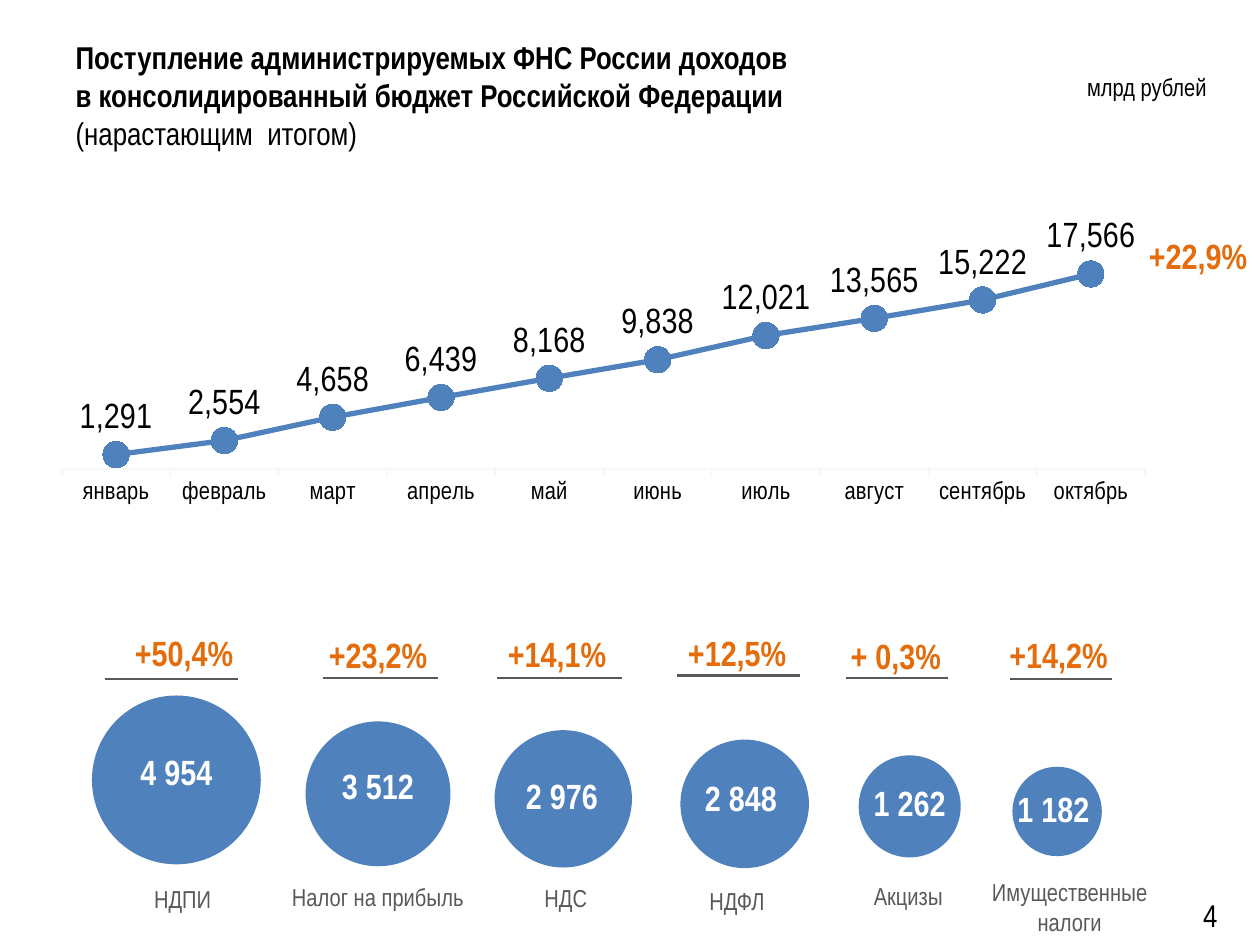
from collections import namedtuple
from dataclasses import dataclass

from lxml.etree import SubElement
from pptx import Presentation
from pptx.chart.data import CategoryChartData as ChartData
from pptx.dml.color import RGBColor as RGB
from pptx.enum.chart import (XL_CHART_TYPE as Kind, XL_LABEL_POSITION as Place,
                             XL_MARKER_STYLE as Mark, XL_TICK_MARK as Tick)
from pptx.enum.shapes import MSO_CONNECTOR as Link, MSO_SHAPE as Shape
from pptx.enum.text import MSO_ANCHOR as Anchor, MSO_AUTO_SIZE as Fit, PP_ALIGN as Align
from pptx.oxml import parse_xml
from pptx.oxml.ns import nsdecls, qn
from pptx.util import Inches, Pt


@dataclass(frozen=True)
class Theme:
    font: str = "Arial Narrow"
    blue: RGB = RGB(0x4F, 0x81, 0xBD)
    orange: RGB = RGB(0xE4, 0x6C, 0x0A)
    gray: RGB = RGB(0x59, 0x59, 0x59)
    pale: RGB = RGB(0xBF, 0xBF, 0xBF)
    black: RGB = RGB(0, 0, 0)
    white: RGB = RGB(0xFF, 0xFF, 0xFF)
    small: int = 14
    head: int = 18
    large: int = 20


theme = Theme()
Box = namedtuple("Box", "left top width height")
# Points are (x from the column's middle, y from its top)
Tax = namedtuple("Tax", "names value growth mid size disc_y num label gain rule rule_w")

MONTHS = ("январь", "февраль", "март", "апрель", "май", "июнь",
          "июль", "август", "сентябрь", "октябрь")
TOTALS = (1291, 2554, 4658, 6439, 8168, 9838, 12021, 13565, 15222, 17566)

TAXES = (
    Tax(["НДПИ"], "4 954", "+50,4%", 1.4, 1.34, 1.29,
        (0, 1.22), (0.05, 2.24), (0.06, 0.28), (-0.04, 0.49), 1.06),
    Tax(["Налог на прибыль"], "3 512", "+23,2%", 3, 1.15, 1.4,
        (0, 1.33), (0, 2.22), (0, 0.3), (0.02, 0.48), 0.92),
    Tax(["НДС"], "2 976", "+14,1%", 4.47, 1.09, 1.44,
        (-0.01, 1.41), (0.02, 2.23), (-0.05, 0.29), (-0.03, 0.48), 0.99),
    Tax(["НДФЛ"], "2 848", "+12,5%", 5.91, 1.02, 1.48,
        (-0.03, 1.43), (-0.06, 2.25), (-0.06, 0.28), (-0.05, 0.46), 0.98),
    Tax(["Акцизы"], "1 262", "+ 0,3%", 7.22, 0.81, 1.5,
        (0, 1.47), (-0.01, 2.21), (-0.11, 0.31), (-0.1, 0.48), 0.81),
    Tax(["Имущественные", "налоги"], "1 182", "+14,2%", 8.39, 0.71, 1.54,
        (-0.03, 1.52), (0.1, 2.3), (0.01, 0.3), (0.03, 0.49), 0.81),
)


def style(font, size, color, bold=False):
    font.name, font.size, font.bold = theme.font, Pt(size), bold
    font.color.rgb = color


def add_text(slide, box, lines, size, color, bold=False, align=Align.CENTER,
             anchor=Anchor.TOP):
    frame = slide.shapes.add_textbox(*map(Inches, box)).text_frame
    frame.word_wrap, frame.auto_size = False, Fit.NONE
    frame.vertical_anchor = anchor
    for i, line in enumerate(lines):
        para = frame.paragraphs[0] if i == 0 else frame.add_paragraph()
        para.alignment = align
        run = para.add_run()
        run.text = line
        style(run.font, size, color, bold)
    return frame


def draw_head(slide, box):
    title = slide.shapes.title
    title.left, title.top, title.width, title.height = map(Inches, box)
    frame = title.text_frame
    frame.word_wrap, frame.auto_size = True, Fit.NONE
    frame.vertical_anchor = Anchor.MIDDLE
    para = frame.paragraphs[0]
    para.alignment = Align.LEFT
    lines = (("Поступление администрируемых ФНС России доходов ", True),
             ("в консолидированный бюджет Российской Федерации", True),
             ("(нарастающим  итогом)", False))
    for i, (line, bold) in enumerate(lines):
        if i:
            para.add_line_break()
        run = para.add_run()
        run.text = line
        style(run.font, theme.head, theme.black, bold)
    # Unit of measure, at the right
    add_text(slide, Box(box.left + 8.03, box.top + 0.39, 1.22, 0.34),
             ["млрд рублей"], theme.small, theme.black, align=Align.LEFT)


def draw_chart(slide, box):
    data = ChartData(number_format="#,##0")
    data.categories = MONTHS
    data.add_series("Доходы", TOTALS)
    chart = slide.shapes.add_chart(Kind.LINE_MARKERS_STACKED, *map(Inches, box), data).chart
    style(chart.font, theme.head, theme.black)
    chart.has_legend = chart.has_title = False

    # Axes
    values, months = chart.value_axis, chart.category_axis
    values.minimum_scale = -200
    values.has_major_gridlines = values.visible = False
    months.major_tick_mark = Tick.OUTSIDE
    style(months.tick_labels.font, theme.small, theme.black)
    edge = months.format.line
    edge.width, edge.color.rgb = Pt(0.75), theme.pale
    tint = edge.fill._xPr.find(".//" + qn("a:srgbClr"))
    SubElement(tint, qn("a:alpha")).set("val", "14000")

    # Line, markers and value labels
    row = chart.plots[0].series[0]
    row.smooth = False
    row.format.line.width, row.format.line.color.rgb = Pt(3), theme.blue
    row.marker.style, row.marker.size = Mark.CIRCLE, 15
    row.marker.format.fill.solid()
    row.marker.format.fill.fore_color.rgb = theme.blue
    row.marker.format.line.fill.background()
    chart.plots[0].vary_by_categories = False
    labels = row.data_labels
    labels.show_value, labels.position = True, Place.ABOVE
    labels.number_format, labels.number_format_is_linked = "#,##0", False
    style(labels.font, theme.large, theme.black)

    # Inner plot area
    area = chart._chartSpace.chart.plotArea
    for old in area.findall(qn("c:layout")):
        area.remove(old)
    parts = (("xMode", "edge"), ("yMode", "edge"), ("x", 0.017), ("y", 0.1),
             ("w", 0.966), ("h", 0.773))
    inner = "".join(f'<c:{tag} val="{val}"/>' for tag, val in parts)
    area.insert(0, parse_xml(
        f'<c:layout {nsdecls("c")}><c:manualLayout><c:layoutTarget val="inner"/>'
        f'{inner}</c:manualLayout></c:layout>'))

    # Total growth, beside the last point
    add_text(slide, Box(box.left + 8.68, box.top + 0.06, 0.99, 0.44), ["+22,9%"],
             theme.large, theme.orange, True, Align.LEFT)


def draw_tax(slide, tax, box):
    mid = box.left + box.width / 2

    def around(point, width, height):
        return Box(mid + point[0] - width / 2, box.top + point[1] - height / 2,
                   width, height)

    # Growth over its rule
    add_text(slide, around(tax.gain, 0.99, 0.44), [tax.growth],
             theme.large, theme.orange, True)
    left, y, width, _ = around(tax.rule, tax.rule_w, 0)
    rule = slide.shapes.add_connector(Link.STRAIGHT, *map(Inches, (left, y, left + width, y)))
    rule.line.width, rule.line.color.rgb = Pt(1.5), theme.gray
    SubElement(rule._element.spPr, qn("a:effectLst"))

    # Disc with the sum
    disc = slide.shapes.add_shape(
        Shape.OVAL, *map(Inches, around((0, tax.disc_y), tax.size, tax.size)))
    disc.shadow.inherit = False
    disc.fill.solid()
    disc.fill.fore_color.rgb = theme.blue
    disc.line.fill.background()
    add_text(slide, around(tax.num, 0.98, 0.98), [tax.value],
             theme.large, theme.white, True, anchor=Anchor.MIDDLE)

    # Name of the tax
    height = 0.11 + 0.23 * len(tax.names)
    add_text(slide, around(tax.label, box.width, height), tax.names,
             theme.small, theme.gray)


def draw_page(slide, box):
    frame = add_text(slide, box, ["4"], theme.head, theme.black, anchor=Anchor.MIDDLE)
    frame.word_wrap = True
    frame.paragraphs[0].line_spacing = Pt(30.1)


def main():
    deck = Presentation()
    deck.slide_width, deck.slide_height = Inches(10), Inches(7.5)
    slide = deck.slides.add_slide(deck.slide_layouts[5])
    draw_head(slide, Box(0.5, 0.13, 9, 1.25))
    draw_chart(slide, Box(0.34, 1.75, 8.9, 2.28))
    for tax in TAXES:
        draw_tax(slide, tax, Box(tax.mid - 0.8, 4.9, 1.6, 2.6))
    draw_page(slide, Box(9.21, 6.82, 0.79, 0.76))
    deck.save("out.pptx")


if __name__ == "__main__":
    main()
